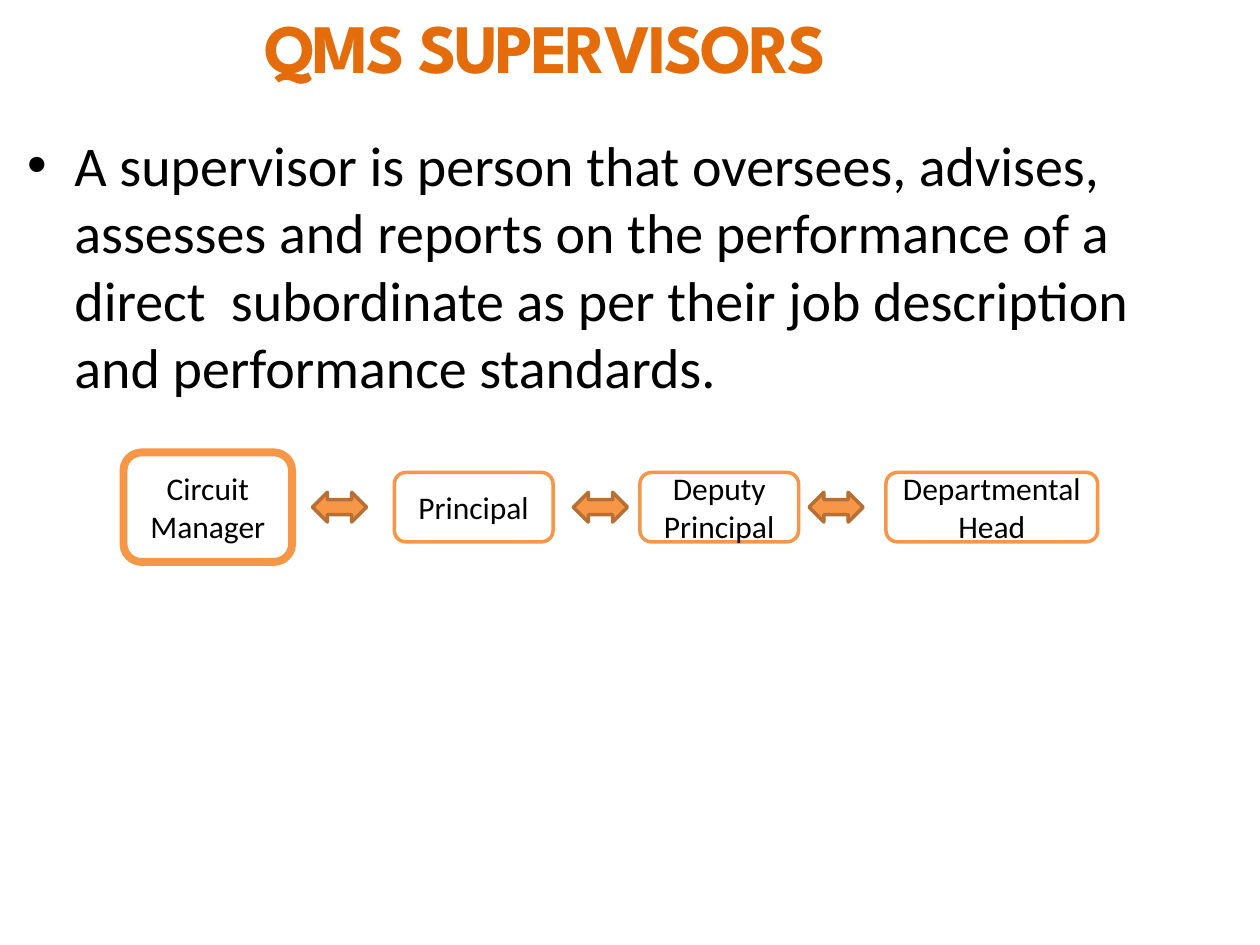
from dataclasses import dataclass

from lxml import etree
from pptx import Presentation
from pptx import util as u
from pptx.dml.color import RGBColor
from pptx.enum import shapes, text
from pptx.oxml import ns


@dataclass(frozen=True)
class Theme:
    """Colours, fonts and type sizes of the slide."""
    heading: str = "E46C0A"
    ink: str = "000000"
    paper: str = "FFFFFF"
    accent: str = "F79646"
    edge: str = "B76F34"
    heading_font: str = "League Spartan"
    body_font: str = "Calibri"
    heading_size: float = 39.6
    body_size: float = 32
    label_size: float = 18
    line: float = 2
    heavy_line: float = 4.5


THEME = Theme()
ROLES = [
    ("Circuit\u0020Manager", 0, 3.4, 2.21, THEME.heavy_line),
    ("Principal", 5.46, 3.2, 1.4, THEME.line),
    ("Deputy Principal", 10.41, 3.2, 1.4, THEME.line),
    ("Departmental\nHead", 15.37, 4.27, 1.4, THEME.line),
]
ARROW_OFFSETS = (3.81, 9.07, 13.82)
ARROW_SIZE = (1.09, 0.6)


def style_font(para, name, size, color, bold=False):
    """Set the font of a whole paragraph."""
    font = para.font
    font.name, font.size, font.bold = name, u.Pt(size), bold
    font.color.rgb = RGBColor.from_string(color)


def add_text(page, left, top, width, height, words):
    """Add a wrapping text box and return it."""
    box = page.shapes.add_textbox(u.Cm(left), u.Cm(top), u.Cm(width), u.Cm(height))
    box.text_frame.word_wrap = True
    box.text_frame.text = words
    return box


def add_title(page, left, top, width, height):
    """Place the centred, tightly spaced heading."""
    frame = add_text(page, left, top, width, height, "QMS SUPERVISORS").text_frame
    frame.vertical_anchor = text.MSO_ANCHOR.MIDDLE
    para = frame.paragraphs[0]
    para.alignment = text.PP_ALIGN.CENTER
    style_font(para, THEME.heading_font, THEME.heading_size, THEME.heading, bold=True)
    para.runs[0].font._element.set("spc", "-150")


def add_definition(page, left, top, width, height):
    """Place the bulleted definition of a supervisor."""
    words = ("A supervisor is person that oversees, advises, assesses and reports "
             "on the performance of a direct  subordinate as per their job "
             "description and performance standards.")
    para = add_text(page, left, top, width, height, words).text_frame.paragraphs[0]
    props = para._p.get_or_add_pPr()
    indent = u.Cm(0.95)
    props.set("marL", str(indent))
    props.set("indent", str(-indent))
    font = etree.SubElement(props, ns.qn("a:buFont"))
    font.set("typeface", "Arial")
    bullet = etree.SubElement(props, ns.qn("a:buChar"))
    bullet.set("char", "•")
    style_font(para, THEME.body_font, THEME.body_size, THEME.ink)


def add_block(page, kind, left, middle, width, height, fill, line, weight):
    """Add a filled, outlined shape centred on a horizontal axis."""
    block = page.shapes.add_shape(kind, u.Cm(left), u.Cm(middle - height / 2),
                                  u.Cm(width), u.Cm(height))
    block.shadow.inherit = False
    block.fill.solid()
    block.fill.fore_color.rgb = RGBColor.from_string(fill)
    block.line.color.rgb = RGBColor.from_string(line)
    block.line.width = u.Pt(weight)
    return block


def add_chain(page, left, top, height):
    """Place the chain of roles with two-way arrows between them."""
    middle = top + height / 2
    for label, offset, width, tall, weight in ROLES:
        block = add_block(page, shapes.MSO_SHAPE.ROUNDED_RECTANGLE, left + offset,
                          middle, width, tall, THEME.paper, THEME.accent, weight)
        frame = block.text_frame
        frame.word_wrap = True
        frame.vertical_anchor = text.MSO_ANCHOR.MIDDLE
        frame.text = label
        for para in frame.paragraphs:
            para.alignment = text.PP_ALIGN.CENTER
            style_font(para, THEME.body_font, THEME.label_size, THEME.ink)
    for offset in ARROW_OFFSETS:
        add_block(page, shapes.MSO_SHAPE.LEFT_RIGHT_ARROW, left + offset, middle,
                  *ARROW_SIZE, THEME.accent, THEME.edge, THEME.line)


def main():
    """Build and save the slide."""
    deck = Presentation()
    deck.slide_width, deck.slide_height = u.Cm(25.4), u.Cm(19.05)
    page = deck.slides.add_slide(deck.slide_layouts[6])
    add_title(page, 2.69, 0.13, 16.61, 1.6)
    add_definition(page, 0.3, 2.51, 24.21, 15.01)
    add_chain(page, 2.49, 9.12, 2.21)
    deck.save("out.pptx")


if __name__ == "__main__":
    main()
